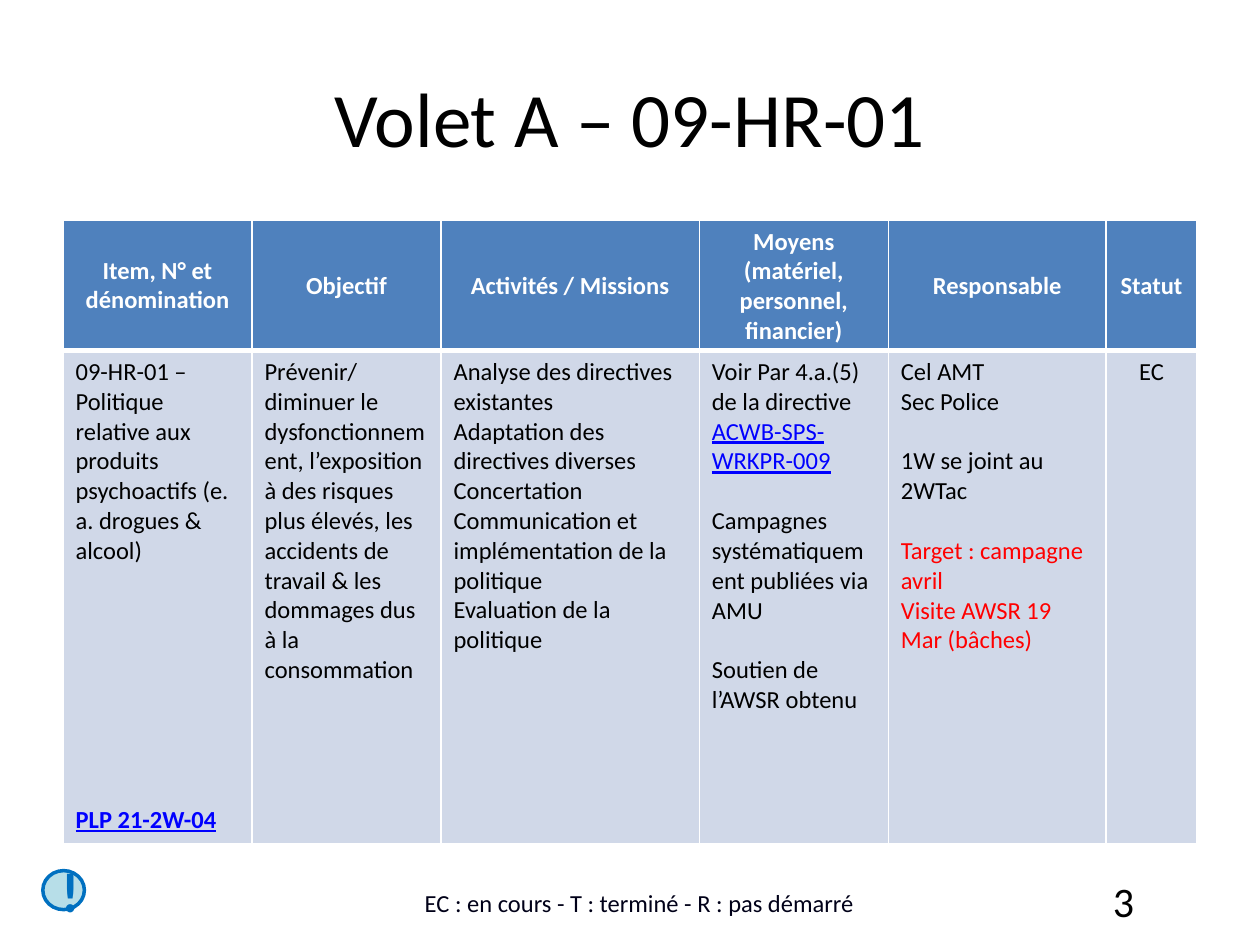
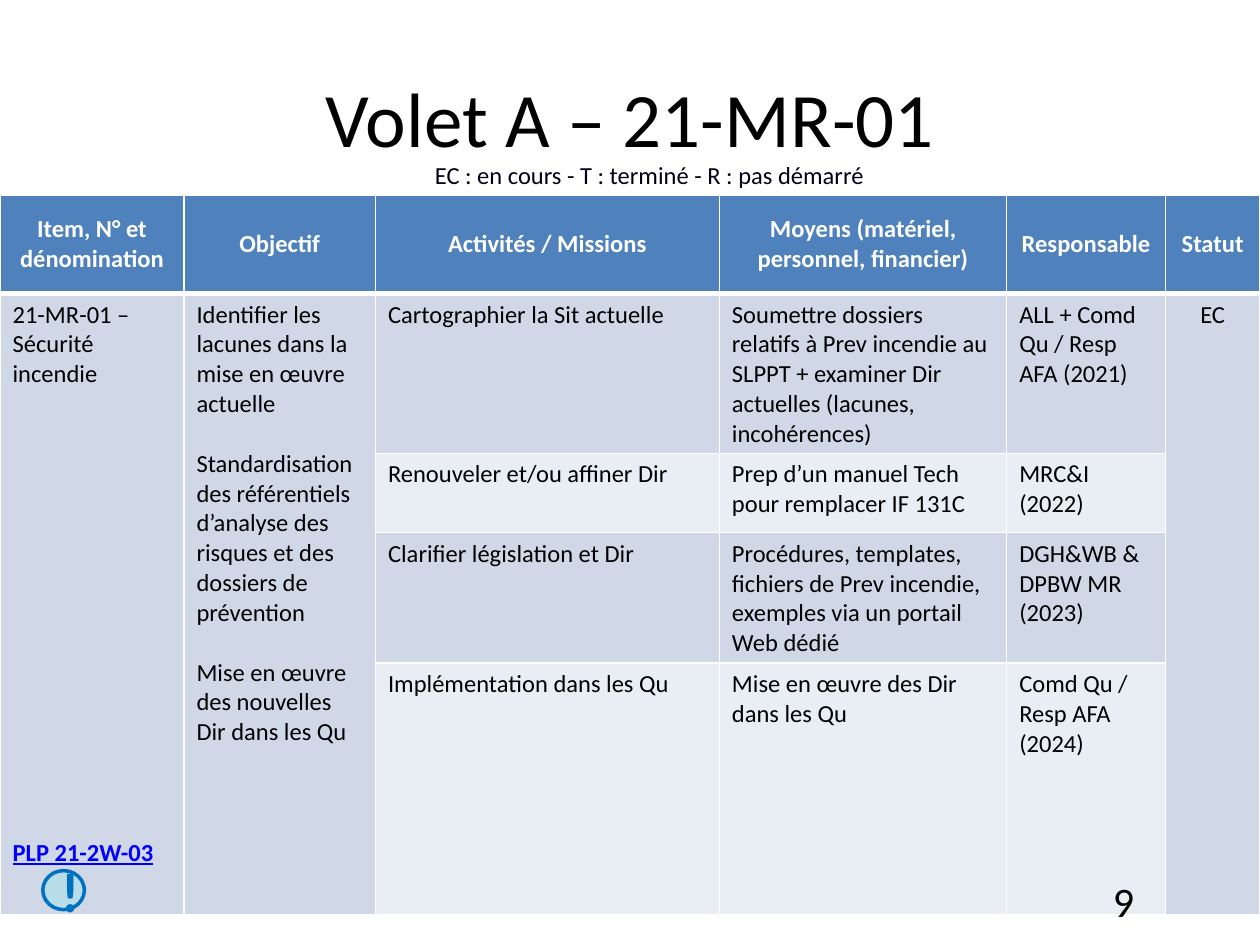
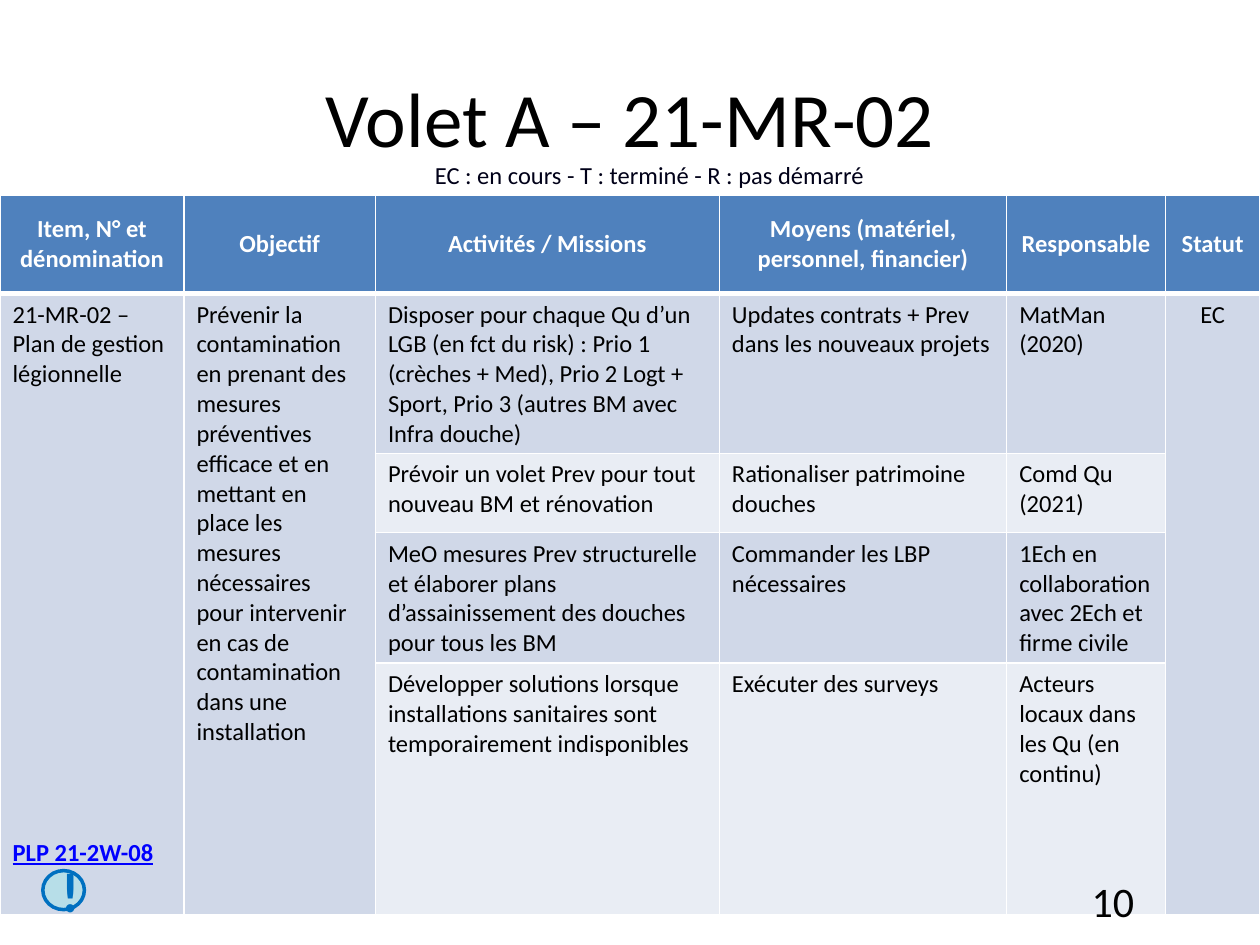
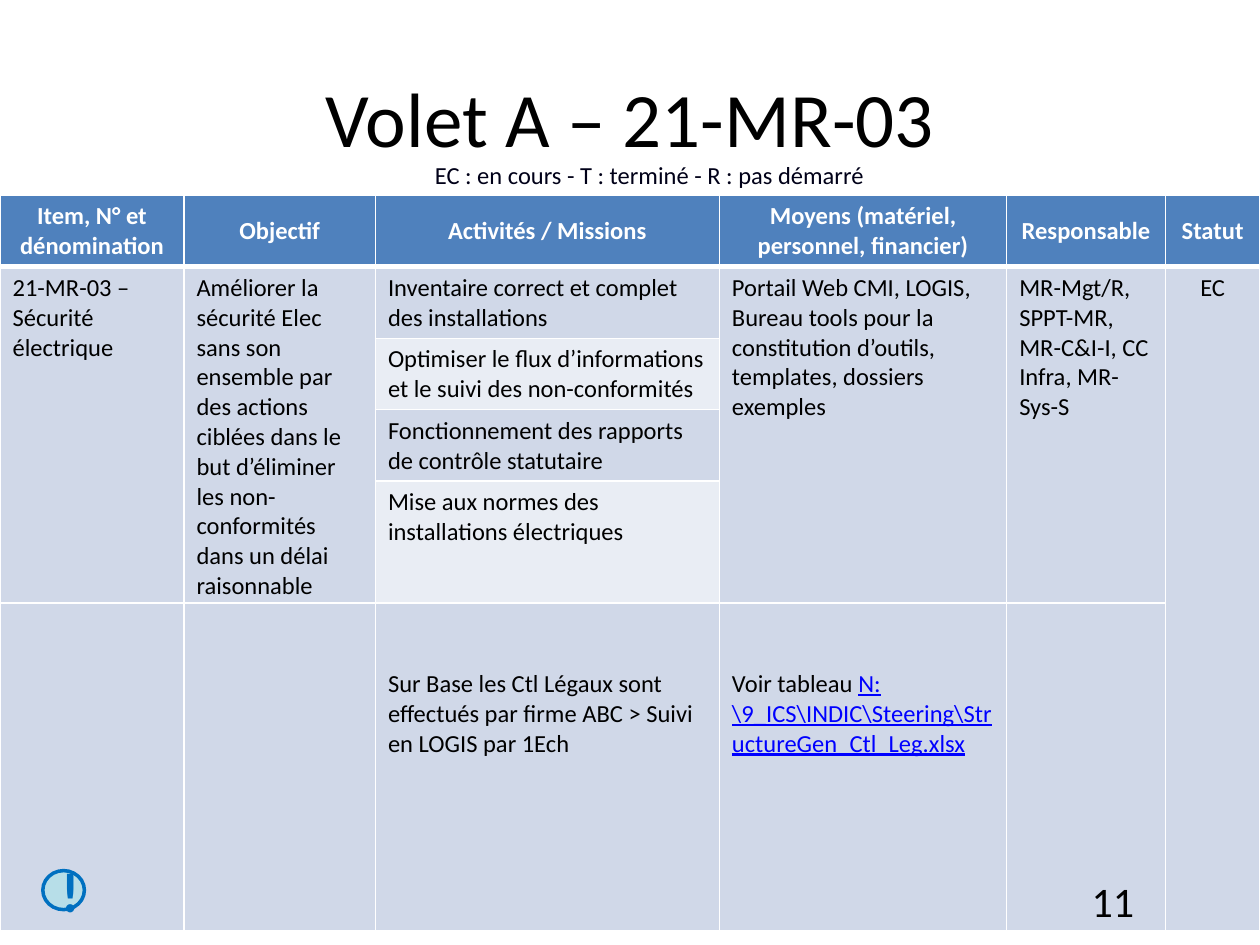
from pptx import Presentation
from pptx import util as u
from pptx.dml.color import RGBColor
from pptx.enum import shapes, text
from pptx.oxml import parse_xml
from pptx.oxml.ns import nsdecls

# Shared style
FONT = "Calibri"
BLACK, WHITE, RED, LINK = "000000", "FFFFFF", "FF0000", "0000FF"
HEADER, BAND_DARK, BAND_LIGHT = "4F81BD", "D0D8E8", "E9EDF4"
LEGEND, BADGE_FILL, BADGE_INK = "000018", "B7DEE8", "0070C0"
BODY_SIZE = 14
LINE_HEIGHT = 17.09  # points per line of body text
LEFT, CENTER, RIGHT = text.PP_ALIGN.LEFT, text.PP_ALIGN.CENTER, text.PP_ALIGN.RIGHT
TOP, MIDDLE, BOTTOM = text.MSO_ANCHOR.TOP, text.MSO_ANCHOR.MIDDLE, text.MSO_ANCHOR.BOTTOM

HEADINGS = ["Item, N° et dénomination", "Objectif", "Activités / Missions",
            "Moyens (matériel, personnel, financier)", "Responsable", "Statut"]
WIDE_COLUMNS = [1.46, 1.52, 2.73, 2.28, 1.26, 0.75]
WIDE_ROWS = [0.78, 0.87, 0.63, 1.01, 2]


def color(value):
    return RGBColor.from_string(value)


def inches(values):
    return [u.Inches(value) for value in values]


def line(words="", link="", gap=0, ink=BLACK, bold=False):
    """One paragraph of a cell; gap counts the lines left free above it."""
    return {"words": words, "link": link, "gap": gap, "ink": ink, "bold": bold}


# Text
def add_run(paragraph, words, size=BODY_SIZE, ink=BLACK, bold=False, underline=False):
    run = paragraph.add_run()
    run.text = words
    run.font.name, run.font.size = FONT, u.Pt(size)
    run.font.bold, run.font.underline = bold, underline
    run.font.color.rgb = color(ink)


def write(frame, words, align=CENTER, anchor=MIDDLE, **style):
    frame.word_wrap = True
    frame.vertical_anchor = anchor
    paragraph = frame.paragraphs[0]
    paragraph.alignment = align
    add_run(paragraph, words, **style)


def add_label(slide, box, words, **style):
    write(slide.shapes.add_textbox(*inches(box)).text_frame, words, **style)


# Table
def set_borders(cell, bottom):
    properties = cell._tc.get_or_add_tcPr()
    for side, points in (("L", 1), ("R", 1), ("T", 1), ("B", bottom)):
        properties.append(parse_xml(
            f'<a:ln{side} {nsdecls("a")} w="{u.Pt(points)}"><a:solidFill>'
            f'<a:srgbClr val="{WHITE}"/></a:solidFill></a:ln{side}>'))


def fill_cell(cell, content, align, anchor):
    lines = content if isinstance(content, list) else [content]
    lines = [line(item) if isinstance(item, str) else item for item in lines]
    cell.vertical_anchor = anchor
    for index, item in enumerate(lines):
        space = u.Pt(item["gap"] * LINE_HEIGHT)
        if index == 0:
            paragraph = cell.text_frame.paragraphs[0]
            cell.margin_top = u.Inches(0.05) + space
        else:
            paragraph = cell.text_frame.add_paragraph()
            paragraph.space_before = space
        paragraph.alignment = align
        if item["words"]:
            add_run(paragraph, item["words"], ink=item["ink"], bold=item["bold"])
        if item["link"]:
            add_run(paragraph, item["link"], ink=LINK, bold=item["bold"], underline=True)
        if not item["words"] and not item["link"]:
            paragraph.font.size = u.Pt(BODY_SIZE)


def merge_down(table, rows):
    """Join each cell with the empty (None) places below it."""
    for column in range(len(HEADINGS)):
        for start, row in enumerate(rows):
            end = start
            while end + 1 < len(rows) and rows[end + 1][column] is None:
                end += 1
            if row[column] is not None and end > start:
                table.cell(start, column).merge(table.cell(end, column))


def add_plan_table(slide, left, top, widths, heights, body):
    rows = [[line(heading, ink=WHITE, bold=True) for heading in HEADINGS]] + body
    box = inches([left, top, sum(widths), sum(heights)])
    table = slide.shapes.add_table(len(rows), len(widths), *box).table
    table.horz_banding = False
    for column, width in zip(table.columns, widths):
        column.width = u.Inches(width)
    for row, height in zip(table.rows, heights):
        row.height = u.Inches(height)
    merge_down(table, rows)
    for r, row in enumerate(rows):
        for c, content in enumerate(row):
            cell = table.cell(r, c)
            set_borders(cell, bottom=1 if r else 3)
            cell.fill.solid()
            band = BAND_DARK if r % 2 else BAND_LIGHT
            cell.fill.fore_color.rgb = color(band if r else HEADER)
            if content is not None:
                centered = r == 0 or c == len(HEADINGS) - 1
                fill_cell(cell, content, CENTER if centered else LEFT, TOP if r else MIDDLE)


# Slide parts
def add_badge(slide):
    badge = slide.shapes.add_shape(shapes.MSO_SHAPE.FLOWCHART_CONNECTOR,
                                   *inches([0.34, 6.91, 0.33, 0.31]))
    badge.shadow.inherit = False
    badge.fill.solid()
    badge.fill.fore_color.rgb = color(BADGE_FILL)
    badge.line.color.rgb = color(BADGE_INK)
    badge.line.width = u.Pt(2)
    write(badge.text_frame, "!", size=32, ink=BADGE_INK, bold=True)


def add_plan_slide(presentation, code, number, body, left=0, top=1.55,
                   widths=WIDE_COLUMNS, heights=WIDE_ROWS, legend_at=(2.4, 1.17)):
    slide = presentation.slides.add_slide(presentation.slide_layouts[6])
    add_label(slide, (0.5, 0.3, 9, 1.25), f"Volet A – {code}", size=44)
    add_plan_table(slide, left, top, widths, heights, body)
    add_label(slide, (7.17, 6.95, 1.93, 0.4), str(number), size=24, align=RIGHT)
    add_label(slide, (*legend_at, 5.51, 0.38),
              "EC : en cours - T : terminé - R : pas démarré", ink=LEGEND, anchor=BOTTOM)
    add_badge(slide)


# Contents
SUBSTANCES = [[
    ["09-HR-01 – Politique relative aux produits psychoactifs (e. a. drogues & alcool)",
     line(link="PLP 21-2W-04", gap=8, bold=True)],
    "Prévenir/diminuer le dysfonctionnement, l’exposition à des risques plus élevés, "
    "les accidents de travail & les dommages dus à la consommation",
    ["Analyse des directives existantes", "Adaptation des directives diverses", "Concertation",
     "Communication et implémentation de la politique", "Evaluation de la politique"],
    [line("Voir Par 4.a.(5) de la directive ", link="ACWB-SPS-WRKPR-009"),
     line("Campagnes systématiquement publiées via AMU", gap=1),
     line("Soutien de l’AWSR obtenu", gap=1)],
    ["Cel AMT", "Sec Police", line("1W se joint au 2WTac", gap=1),
     line("Target : campagne avril", gap=1, ink=RED),
     line("Visite AWSR 19 Mar (bâches)", ink=RED)],
    "EC",
]]

FIRE_SAFETY = [
    [["21-MR-01 – Sécurité incendie", line(link="PLP 21-2W-03", gap=15, bold=True)],
     ["Identifier les lacunes dans la mise en œuvre actuelle",
      line("Standardisation des référentiels d’analyse des risques et des dossiers de prévention",
           gap=1),
      line("Mise en œuvre des nouvelles Dir dans les Qu", gap=1)],
     "Cartographier la Sit actuelle",
     "Soumettre dossiers relatifs à Prev incendie au SLPPT + examiner Dir actuelles "
     "(lacunes, incohérences)",
     "ALL + Comd Qu / Resp AFA (2021)", "EC"],
    [None, None, "Renouveler et/ou affiner Dir",
     "Prep d’un manuel Tech pour remplacer IF 131C", "MRC&I (2022)", None],
    [None, None, "Clarifier législation et Dir",
     "Procédures, templates, fichiers de Prev incendie, exemples via un portail Web dédié",
     "DGH&WB & DPBW MR (2023)", None],
    [None, None, "Implémentation dans les Qu", "Mise en œuvre des Dir dans les Qu",
     "Comd Qu / Resp AFA (2024)", None],
]

LEGIONELLA = [
    [["21-MR-02 – Plan de gestion légionnelle", line(link="PLP 21-2W-08", gap=15, bold=True)],
     "Prévenir la contamination en prenant des mesures préventives efficace et en mettant en "
     "place les mesures nécessaires pour intervenir en cas de contamination dans une installation",
     "Disposer pour chaque Qu d’un LGB (en fct du risk) : Prio 1 (crèches + Med), "
     "Prio 2 Logt + Sport, Prio 3 (autres BM avec Infra douche)",
     "Updates contrats + Prev dans les nouveaux projets", "MatMan (2020)", "EC"],
    [None, None, "Prévoir un volet Prev pour tout nouveau BM et rénovation",
     "Rationaliser patrimoine douches", "Comd Qu (2021)", None],
    [None, None, "MeO mesures Prev structurelle et élaborer plans d’assainissement des douches "
     "pour tous les BM",
     "Commander les LBP nécessaires", "1Ech en collaboration avec 2Ech et firme civile", None],
    [None, None, "Développer solutions lorsque installations sanitaires sont "
     "temporairement indisponibles",
     "Exécuter des surveys", "Acteurs locaux dans les Qu (en continu)", None],
]

ELECTRICAL_SAFETY = [
    ["21-MR-03 – Sécurité électrique",
     "Améliorer la sécurité Elec sans son ensemble par des actions ciblées dans le but "
     "d’éliminer les non-conformités dans un délai raisonnable",
     "Inventaire correct et complet des installations",
     "Portail Web CMI, LOGIS, Bureau tools pour la constitution d’outils, templates, "
     "dossiers exemples",
     "MR-Mgt/R, SPPT-MR, MR-C&I-I, CC Infra, MR-Sys-S", "EC"],
    [None, None, "Optimiser le flux d’informations et le suivi des non-conformités",
     None, None, None],
    [None, None, "Fonctionnement des rapports de contrôle statutaire", None, None, None],
    [None, None, "Mise aux normes des installations électriques", None, None, None],
    ["", "",
     line("Sur Base les Ctl Légaux sont effectués par firme ABC > Suivi en LOGIS par 1Ech", gap=2),
     line("Voir tableau ", link=r"N:\9_ICS\INDIC\Steering\StructureGen_Ctl_Leg.xlsx", gap=2),
     "", None],
]


def main():
    presentation = Presentation()
    presentation.slide_width, presentation.slide_height = inches([10, 7.5])
    add_plan_slide(presentation, "09-HR-01", 3, SUBSTANCES, left=0.5, top=1.75,
                   widths=[1.5, 1.5, 2.05, 1.5, 1.73, 0.72], heights=[1.01, 3.91],
                   legend_at=(2.32, 6.95))
    add_plan_slide(presentation, "21-MR-01", 9, FIRE_SAFETY)
    add_plan_slide(presentation, "21-MR-02", 10, LEGIONELLA)
    add_plan_slide(presentation, "21-MR-03", 11, ELECTRICAL_SAFETY,
                   heights=[0.3, 0.33, 0.24, 0.24, 0.22, 2.6])
    presentation.save("out.pptx")


if __name__ == "__main__":
    main()
